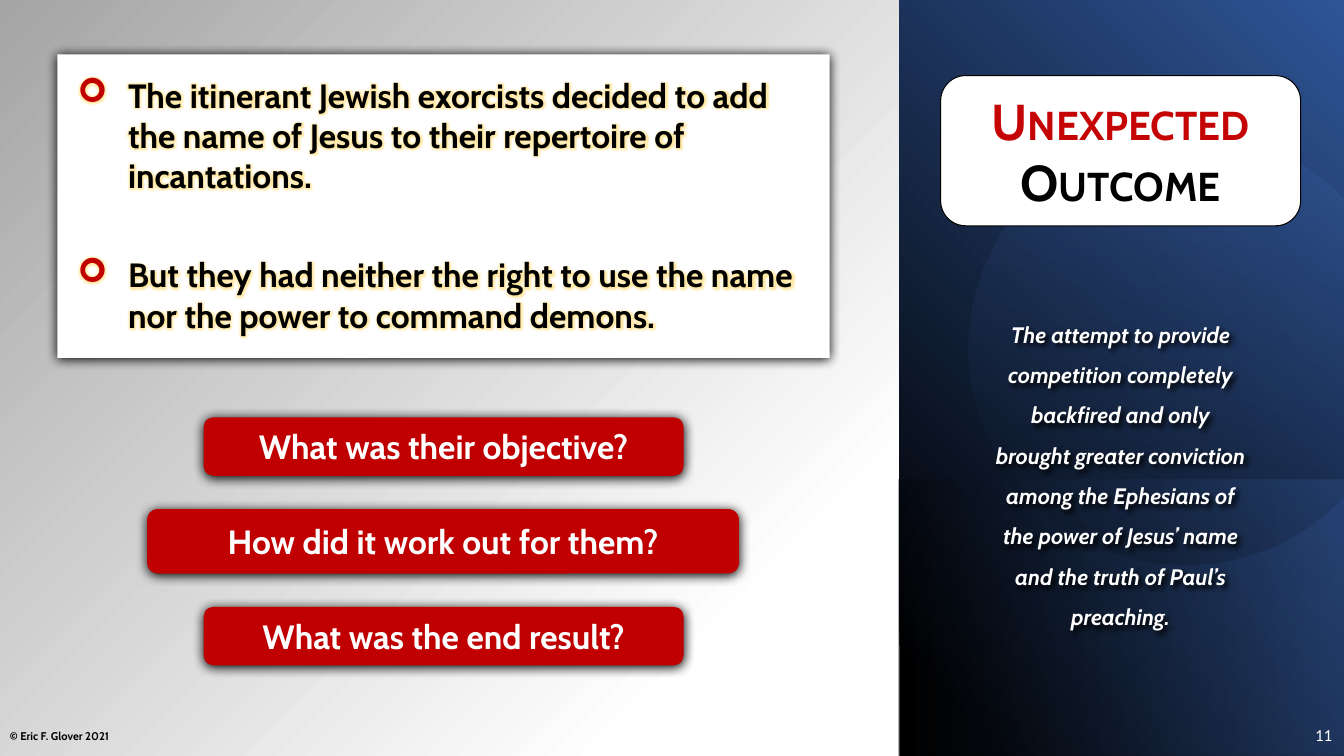
from lxml.etree import SubElement
from pptx import Presentation
from pptx.dml.color import RGBColor
from pptx.enum.shapes import MSO_SHAPE
from pptx.enum.text import MSO_ANCHOR, MSO_AUTO_SIZE, PP_ALIGN
from pptx.oxml.ns import qn
from pptx.util import Inches, Pt

COLORS = {
    "white": "FFFFFF", "black": "000000", "gray": "A5A5A5", "navy": "2F5597",
    "blue": "4472C4", "title_red": "C50505", "red": "C00000", "glow": "FFD966",
}
NO_INSETS = (0.1, 0, 0.1, 0)
BOX_INSETS = (0.1, 0.05, 0.1, 0.05)


def rgb(name):
    return RGBColor.from_string(COLORS[name])


def add_color(parent, name, opacity=100):
    clr = SubElement(parent, qn("a:srgbClr"), val=COLORS[name])
    if opacity < 100:
        SubElement(clr, qn("a:alpha"), val=str(opacity * 1000))


def set_gradient(fill, props, stops, angle=None):
    fill.solid()
    solid = props.find(qn("a:solidFill"))
    grad = SubElement(props, qn("a:gradFill"), rotWithShape="1")
    stop_list = SubElement(grad, qn("a:gsLst"))
    for pos, *color in stops:
        add_color(SubElement(stop_list, qn("a:gs"), pos=str(pos * 1000)), *color)
    if angle is None:
        shade = SubElement(grad, qn("a:path"), path="circle")
        SubElement(shade, qn("a:fillToRect"), l="100000", t="100000")
    else:
        SubElement(grad, qn("a:lin"), ang=str(angle * 60000), scaled="0")
    props.replace(solid, grad)


def add_shadow(sp, blur=8.5, dist=1, angle=90):
    effects = sp._element.spPr.find(qn("a:effectLst"))
    shadow = SubElement(effects, qn("a:outerShdw"), blurRad=str(Pt(blur)),
                        dist=str(Pt(dist)), dir=str(angle * 60000),
                        algn="t", rotWithShape="0")
    add_color(shadow, "black")


def add_box(s, kind, at, fill=None, line=None):
    sp = s.shapes.add_shape(kind, *map(Inches, at))
    sp.shadow.inherit = False
    if fill:
        sp.fill.solid()
        sp.fill.fore_color.rgb = rgb(fill)
    else:
        sp.fill.background()
    if line:
        sp.line.color.rgb = rgb(line)
        sp.line.width = Pt(0.75)
    else:
        sp.line.fill.background()
    return sp


def add_glossy(s, kind, at, stops, angle, rotation=0):
    sp = add_box(s, kind, at)
    set_gradient(sp.fill, sp._element.spPr, stops, angle)
    sp.rotation = rotation


def frame(sp, insets=BOX_INSETS, anchor=MSO_ANCHOR.MIDDLE):
    tf = sp.text_frame
    values = dict(zip(("margin_left", "margin_top", "margin_right", "margin_bottom"),
                      map(Inches, insets)))
    values.update(word_wrap=True, vertical_anchor=anchor)
    for name, value in values.items():
        setattr(tf, name, value)
    return tf


def add_run(p, text, size, color, font="Cabin", **styles):
    r = p.add_run()
    r.text = text
    values = {"size": Pt(size), "name": font, "bold": True, **styles}
    for name, value in values.items():
        setattr(r.font, name, value)
    r.font.color.rgb = rgb(color)
    return r


def add_paragraph_text(tf, runs, size, align=PP_ALIGN.CENTER, spacing=None, **styles):
    p = tf.paragraphs[0]
    p.alignment = align
    p.line_spacing = spacing
    return [add_run(p, text, size, color, **styles) for text, color in runs]


def add_bullet(p, text):
    p.alignment = PP_ALIGN.LEFT
    p.space_after = Pt(42)
    props = p._p.get_or_add_pPr()
    props.set("marL", str(Inches(0.5)))
    props.set("indent", str(-Inches(0.5)))
    add_color(SubElement(props, qn("a:buClr")), "red")
    SubElement(props, qn("a:buFont"), typeface="Wingdings")
    SubElement(props, qn("a:buChar"), char="➢")
    r = add_run(p, text, 24, "black")
    run_props = r._r.get_or_add_rPr()
    effects = SubElement(run_props, qn("a:effectLst"))
    add_color(SubElement(effects, qn("a:glow"), rad=str(Pt(5))), "glow", 60)
    run_props.find(qn("a:solidFill")).addnext(effects)


def add_points(s, at, points):
    sp = add_box(s, MSO_SHAPE.RECTANGLE, at, "white")
    add_shadow(sp)
    tf = frame(sp, (0.2,) * 4, MSO_ANCHOR.TOP)
    tf.auto_size = MSO_AUTO_SIZE.SHAPE_TO_FIT_TEXT
    for i, point in enumerate(points):
        add_bullet(tf.add_paragraph() if i else tf.paragraphs[0], point)


def add_question(s, at, text):
    sp = add_box(s, MSO_SHAPE.ROUNDED_RECTANGLE, at, "red")
    add_shadow(sp)
    add_paragraph_text(frame(sp), [(text, "white")], 24)


def add_label(s, at, text, size, color, align, **styles):
    tf = frame(s.shapes.add_textbox(*map(Inches, at)))
    add_paragraph_text(tf, [(text, color)], size, align, **styles)


def add_title(s, at, runs):
    sp = add_box(s, MSO_SHAPE.ROUNDED_RECTANGLE, at, "white", "black")
    for r in add_paragraph_text(frame(sp, NO_INSETS), runs, 36):
        r._r.get_or_add_rPr().set("cap", "small")


def add_summary(s, at, text):
    sp = add_box(s, MSO_SHAPE.ROUNDED_RECTANGLE, at)
    add_shadow(sp, 4, 3, 45)
    add_paragraph_text(frame(sp, (0.1, 0, 0.1, 0.1)), [(text, "white")], 16,
                       spacing=1.5, italic=True)


def add_side_panel(s):
    sheen = [(2, "blue", 29), (100, "black", 30)]
    add_glossy(s, MSO_SHAPE.RECTANGLE, (8.92, 0, 4.42, 7.5),
               [(8, "black"), (100, "navy")], 315)
    add_glossy(s, MSO_SHAPE.RECTANGLE, (8.91, 4.76, 4.42, 2.74), sheen, 180)
    add_glossy(s, MSO_SHAPE.OVAL, (9.61, 1.3, 4.3, 4.3), sheen, 90, 17.8)


def main():
    prs = Presentation()
    prs.slide_width, prs.slide_height = Inches(13.33), Inches(7.5)
    s = prs.slides.add_slide(prs.slide_layouts[6])
    fill = s.background.fill
    fill.solid()
    set_gradient(fill, s._element.find(".//" + qn("p:bgPr")),
                 [(0, "white"), (35, "white"), (100, "gray")])
    add_side_panel(s)
    add_label(s, (12.01, 7.09, 1.3, 0.4), "11", 12, "white", PP_ALIGN.RIGHT,
              font="Calibri", bold=False)
    add_label(s, (0, 7.1, 3, 0.4), "© Eric F. Glover 2021", 8, "black", PP_ALIGN.LEFT)
    add_title(s, (9.33, 0.75, 3.57, 1.49),
              [("Unexpected", "title_red"), (" Outcome", "black")])
    add_points(s, (0.57, 0.54, 7.66, 3.01), [
        "The itinerant Jewish exorcists decided to add the name of Jesus "
        "to their repertoire of incantations.",
        "But they had neither the right to use the name nor the power "
        "to command demons.",
    ])
    for at, text in [
        ((2.02, 4.14, 4.76, 0.58), "What was their objective?"),
        ((1.46, 5.05, 5.87, 0.64), "How did it work out for them?"),
        ((2.02, 6.02, 4.76, 0.58), "What was the end result?"),
    ]:
        add_question(s, at, text)
    add_summary(s, (9.6, 3.1, 3.03, 3.2),
                "The attempt to provide competition completely backfired and only "
                "brought greater conviction among the Ephesians of the power of "
                "Jesus’ name and the truth of Paul’s preaching.")
    prs.save("out.pptx")


if __name__ == "__main__":
    main()
